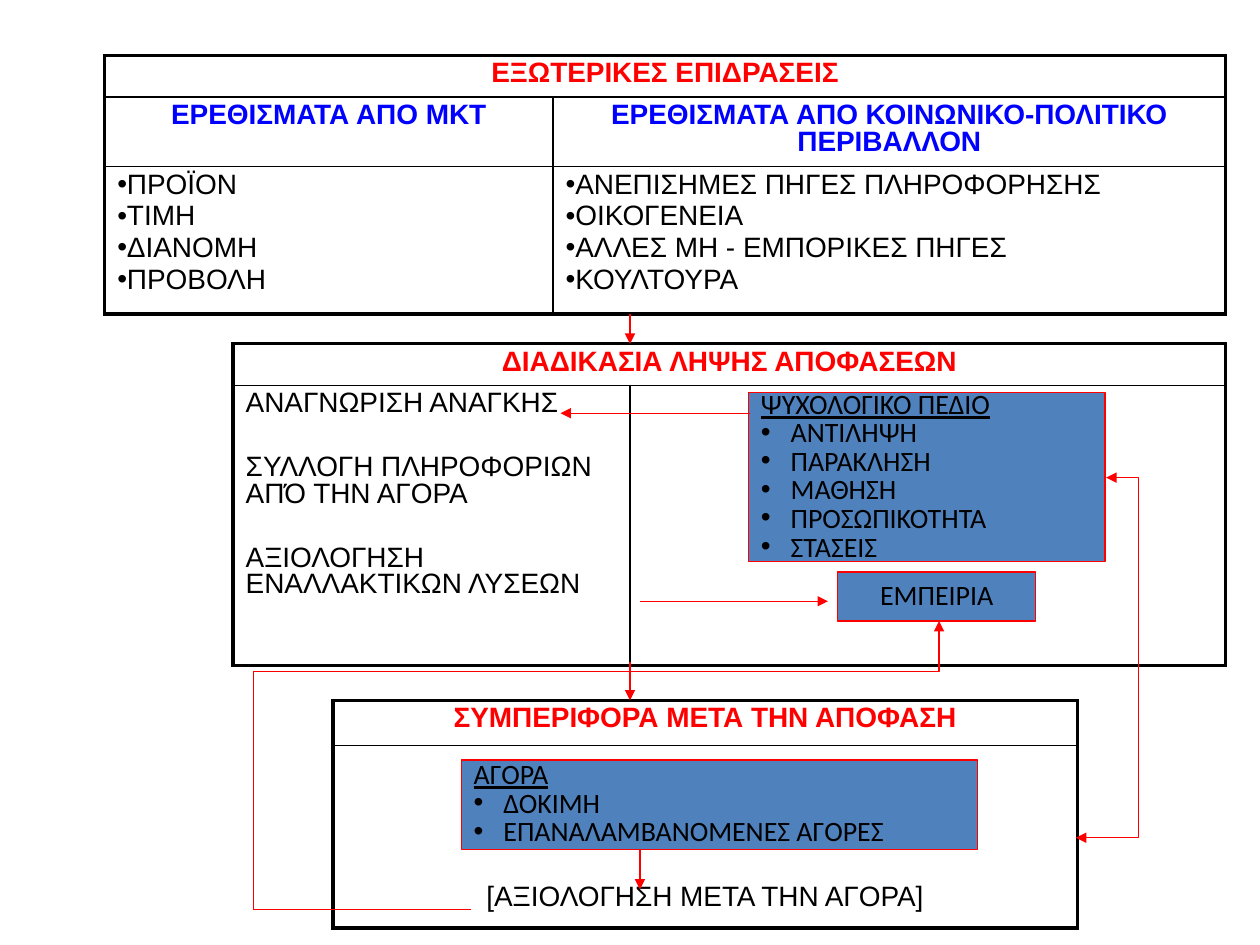
from lxml import etree
from pptx import Presentation
from pptx.dml.color import RGBColor
from pptx.enum.shapes import MSO_CONNECTOR as Connector, MSO_SHAPE as Shape
from pptx.enum.text import MSO_ANCHOR as Anchor, PP_ALIGN as Align
from pptx.oxml.ns import qn
from pptx.util import Cm, Pt

RED, BLUE, BLACK, BOX_FILL = "FF0000", "0000FF", "000000", "4F81BD"


def color(value):
    return RGBColor.from_string(value)


def write(text_frame, lines, font_format, paragraph_format, bullets_from=None, indent=0):
    for index, line in enumerate(lines):
        paragraph = text_frame.paragraphs[0] if index == 0 else text_frame.add_paragraph()
        bulleted = bullets_from is not None and index >= bullets_from
        if bulleted:
            properties = paragraph._p.get_or_add_pPr()
            properties.set("marL", str(Cm(indent)))
            properties.set("indent", str(-Cm(indent)))
            etree.SubElement(properties, qn("a:buFont"), typeface="Arial")
            etree.SubElement(properties, qn("a:buChar"), char="•")
        for name, value in paragraph_format.items():
            if index or name != "space_before":
                setattr(paragraph, name, value)
        run = paragraph.add_run()
        run.text = line
        for name, value in font_format.items():
            if name == "color":
                run.font.color.rgb = color(value)
            elif name != "underline" or not bulleted:
                setattr(run.font, name, value)


presentation = Presentation()
presentation.slide_width, presentation.slide_height = Cm(25.4), Cm(19.05)
slide = presentation.slides.add_slide(presentation.slide_layouts[6])

plain = {"name": "Arial", "size": Pt(16), "bold": False, "color": BLACK}
title = {**plain, "bold": True, "color": RED}
subtitle = {**title, "color": BLUE}
left = {"line_spacing": 0.85, "alignment": Align.LEFT}
center = {"line_spacing": 0.85, "alignment": Align.CENTER}
listed = {**left, "space_before": Pt(1.5), "space_after": Pt(1.5)}
steps = {**left, "space_before": Pt(21.5)}

tables = [
    (2.11, 1.12, [9.04, 13.56], [0.84, 1.4, 2.97], [
        [(["ΕΞΩΤΕΡΙΚΕΣ ΕΠΙΔΡΑΣΕΙΣ"], title, center), None],
        [(["ΕΡΕΘΙΣΜΑΤΑ ΑΠΟ ΜΚΤ"], subtitle, center),
         (["ΕΡΕΘΙΣΜΑΤΑ ΑΠΟ ΚΟΙΝΩΝΙΚΟ-ΠΟΛΙΤΙΚΟ ΠΕΡΙΒΑΛΛΟΝ"], subtitle, center)],
        [(["ΠΡΟΪΟΝ", "ΤΙΜΗ", "ΔΙΑΝΟΜΗ", "ΠΡΟΒΟΛΗ"], plain, listed, 0),
         (["ΑΝΕΠΙΣΗΜΕΣ ΠΗΓΕΣ ΠΛΗΡΟΦΟΡΗΣΗΣ", "ΟΙΚΟΓΕΝΕΙΑ",
           "ΑΛΛΕΣ ΜΗ - ΕΜΠΟΡΙΚΕΣ ΠΗΓΕΣ", "ΚΟΥΛΤΟΥΡΑ"], plain, listed, 0)],
    ]),
    (4.7, 6.93, [8, 12.01], [0.84, 5.64], [
        [(["ΔΙΑΔΙΚΑΣΙΑ ΛΗΨΗΣ ΑΠΟΦΑΣΕΩΝ"], title, center), None],
        [(["ΑΝΑΓΝΩΡΙΣΗ ΑΝΑΓΚΗΣ", "ΣΥΛΛΟΓΗ ΠΛΗΡΟΦΟΡΙΩΝ ΑΠΌ ΤΗΝ ΑΓΟΡΑ",
           "ΑΞΙΟΛΟΓΗΣΗ ΕΝΑΛΛΑΚΤΙΚΩΝ ΛΥΣΕΩΝ"], plain, steps), None],
    ]),
    (6.71, 14.12, [15.01], [0.91, 3.68], [
        [(["ΣΥΜΠΕΡΙΦΟΡΑ ΜΕΤΑ ΤΗΝ ΑΠΟΦΑΣΗ"], title, center)],
        [(["[ΑΞΙΟΛΟΓΗΣΗ ΜΕΤΑ ΤΗΝ ΑΓΟΡΑ]"], plain, center)],
    ]),
]
for x, y, widths, heights, content in tables:
    table = slide.shapes.add_table(len(heights), len(widths), Cm(x), Cm(y),
                                   Cm(sum(widths)), Cm(sum(heights))).table
    table.first_row = table.horz_banding = False
    for column, width in zip(table.columns, widths):
        column.width = Cm(width)
    for row, height in zip(table.rows, heights):
        row.height = Cm(height)
    last_row, last_column = len(heights) - 1, len(widths) - 1
    if last_column:
        table.cell(0, 0).merge(table.cell(0, last_column))
    for i, row_content in enumerate(content):
        for j, cell_content in enumerate(row_content):
            cell = table.cell(i, j)
            if not cell.is_spanned:
                outer = {"lnL": j == 0, "lnR": j == last_column or cell.is_merge_origin,
                         "lnT": i == 0, "lnB": i == last_row}
                for side, is_outer in outer.items():
                    border = etree.SubElement(cell._tc.get_or_add_tcPr(), qn(f"a:{side}"),
                                              w=str(Pt(2.25 if is_outer else 1)))
                    fill = etree.SubElement(border, qn("a:solidFill"))
                    etree.SubElement(fill, qn("a:srgbClr"), val=BLACK)
            cell.fill.background()
            if cell_content:
                write(cell.text_frame, *cell_content)

evaluation_cell = table.cell(1, 0)
evaluation_cell.vertical_anchor = Anchor.BOTTOM
evaluation_cell.margin_bottom = Cm(0.33)

box_font = {"name": "Calibri", "size": Pt(16), "color": BLACK}
heading_font = {**box_font, "underline": True}
boxes = [
    (15.09, 7.92, 7.19, 3.4, heading_font, left,
     ["ΨΥΧΟΛΟΓΙΚΟ ΠΕΔΙΟ", "ΑΝΤΙΛΗΨΗ", "ΠΑΡΑΚΛΗΣΗ", "ΜΑΘΗΣΗ", "ΠΡΟΣΩΠΙΚΟΤΗΤΑ", "ΣΤΑΣΕΙΣ"]),
    (16.89, 11.53, 3.99, 0.99, box_font, center, ["ΕΜΠΕΙΡΙΑ"]),
    (9.3, 15.32, 10.41, 1.8, heading_font, left,
     ["ΑΓΟΡΑ", "ΔΟΚΙΜΗ", "ΕΠΑΝΑΛΑΜΒΑΝΟΜΕΝΕΣ ΑΓΟΡΕΣ"]),
]
for x, y, width, height, font_format, paragraph_format, lines in boxes:
    shape = slide.shapes.add_shape(Shape.RECTANGLE, Cm(x), Cm(y), Cm(width), Cm(height))
    shape.shadow.inherit = False
    shape.fill.solid()
    shape.fill.fore_color.rgb = color(BOX_FILL)
    shape.line.color.rgb = color(RED)
    shape.line.width = Pt(0.75)
    shape.text_frame.word_wrap = True
    shape.text_frame.vertical_anchor = Anchor.MIDDLE
    write(shape.text_frame, lines, font_format, paragraph_format, 1, 0.6)

connectors = [
    (Connector.STRAIGHT, 12.7, 6.32, 12.7, 6.93, 1, ["tailEnd"]),
    (Connector.STRAIGHT, 12.7, 13.34, 12.7, 14.12, 0.75, ["tailEnd"]),
    (Connector.STRAIGHT, 12.9, 17.12, 12.9, 17.93, 0.75, ["tailEnd"]),
    (Connector.STRAIGHT, 12.9, 12.12, 16.69, 12.12, 0.75, ["tailEnd"]),
    (Connector.STRAIGHT, 15.11, 8.33, 11.3, 8.33, 0.75, ["tailEnd"]),
    (Connector.STRAIGHT, 5.11, 13.52, 5.11, 18.34, 0.75, []),
    (Connector.STRAIGHT, 5.11, 18.34, 9.5, 18.34, 0.75, []),
    (Connector.ELBOW, 22.3, 9.63, 21.69, 16.89, 0.75, ["headEnd", "tailEnd"]),
    (Connector.ELBOW, 11.51, 6.12, 12.53, 19.94, 0.75, ["headEnd"]),
]
elbows = []
for kind, x1, y1, x2, y2, width, arrow_ends in connectors:
    connector = slide.shapes.add_connector(kind, Cm(x1), Cm(y1), Cm(x2), Cm(y2))
    connector.line.color.rgb = color(RED)
    connector.line.width = Pt(width)
    for end in arrow_ends:
        etree.SubElement(connector.line._get_or_add_ln(), qn(f"a:{end}"), type="triangle")
    etree.SubElement(connector._element.spPr, qn("a:effectLst"))
    if kind == Connector.ELBOW:
        elbows.append(connector._element.spPr)

side_loop, feedback = elbows
adjustments = side_loop.find(qn("a:prstGeom")).find(qn("a:avLst"))
etree.SubElement(adjustments, qn("a:gd"), name="adj1", fmla="val -106700")
feedback.find(qn("a:prstGeom")).set("prst", "bentConnector2")
feedback.find(qn("a:xfrm")).set("rot", "5400000")

presentation.save("out.pptx")
